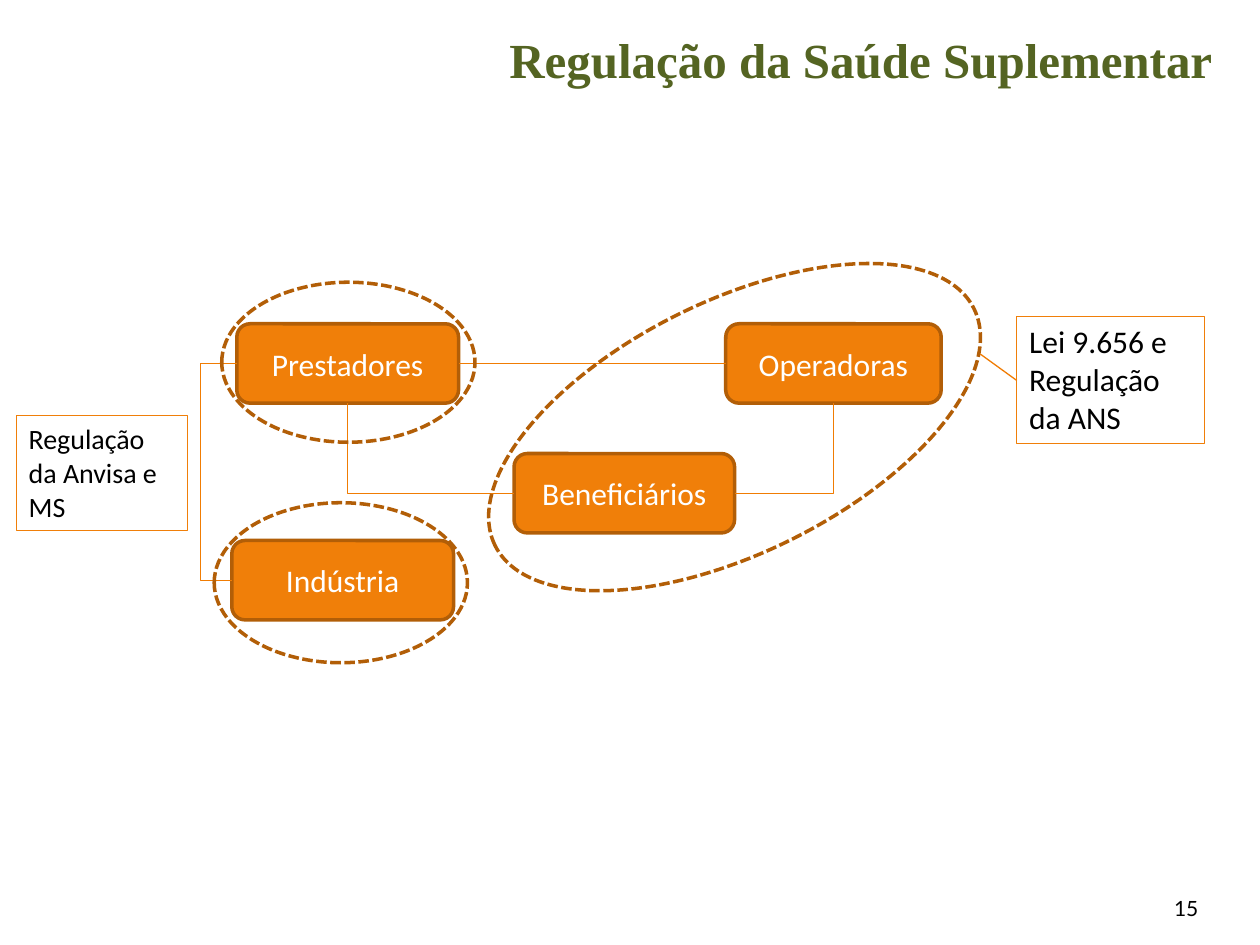
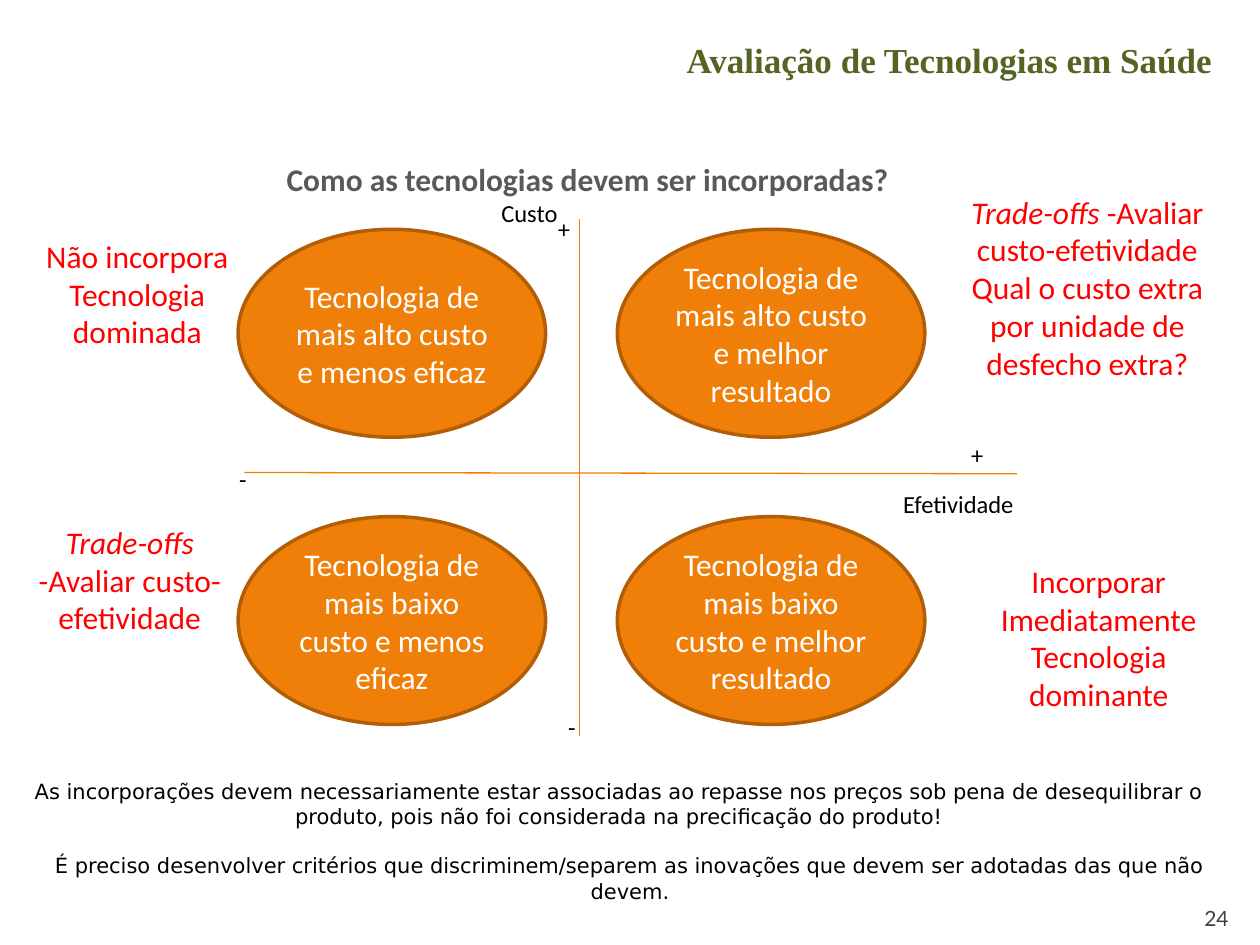
from dataclasses import dataclass
from itertools import product

from lxml.etree import SubElement
from pptx import Presentation
from pptx.dml.color import RGBColor
from pptx.enum.dml import MSO_LINE_DASH_STYLE as Dash
from pptx.enum.shapes import MSO_CONNECTOR as Link, MSO_SHAPE as Form
from pptx.enum.text import MSO_ANCHOR as Anchor, MSO_AUTO_SIZE as AutoSize, PP_ALIGN as Align
from pptx.oxml.ns import qn
from pptx.shapes.autoshape import Shape
from pptx.shapes.connector import Connector
from pptx.slide import Slide
from pptx.util import Inches, Pt

COLORS = {
    "title": "546422",
    "orange": "F07F09",
    "outline": "B25E07",
    "link": "F07C03",
    "heading": "595959",
    "alert": "FF0000",
    "black": "000000",
    "page": "404040",
    "white": "FFFFFF",
}

FONTS = {
    "title": {"name": "Times New Roman", "size": Pt(28), "bold": True},
    "subtitle": {"name": "Times New Roman", "size": Pt(20), "bold": True},
    "heading": {"name": "Calibri", "size": Pt(18), "bold": True},
    "body": {"name": "Calibri", "size": Pt(18)},
    "small": {"name": "Calibri", "size": Pt(16)},
    "axis": {"name": "Calibri", "size": Pt(14)},
    "remark": {"name": "DejaVu Sans", "size": Pt(12)},
    "page": {"name": "Lato", "size": Pt(12)},
}

FOREIGN_TERM = "Trade-offs"
TITLE_LAYOUT = 5


@dataclass(frozen=True)
class Box:
    left: float
    top: float
    width: float
    height: float

    def lengths(self) -> list[int]:
        return [Inches(v) for v in (self.left, self.top, self.width, self.height)]


@dataclass(frozen=True)
class Label:
    text: str
    box: Box
    font: str = "body"
    color: str = "black"
    align: Align = Align.LEFT
    anchor: Anchor = Anchor.TOP


@dataclass(frozen=True)
class Ring:
    box: Box
    rotation: float = 0


def rgb(color: str) -> RGBColor:
    return RGBColor.from_string(COLORS[color])


def write(shape: Shape, label: Label) -> None:
    frame = shape.text_frame
    frame_format = {"word_wrap": True, "auto_size": AutoSize.NONE, "vertical_anchor": label.anchor}
    for attribute, value in frame_format.items():
        setattr(frame, attribute, value)
    for index, line in enumerate(label.text.split("\n")):
        paragraph = frame.paragraphs[0] if index == 0 else frame.add_paragraph()
        paragraph.alignment = label.align
        for piece in filter(None, line.partition(FOREIGN_TERM)):
            run = paragraph.add_run()
            run.text = piece
            for attribute, value in FONTS[label.font].items():
                setattr(run.font, attribute, value)
            run.font.color.rgb = rgb(label.color)
            if piece == FOREIGN_TERM:
                run.font.italic = True


def add_label(slide: Slide, label: Label) -> None:
    write(slide.shapes.add_textbox(*label.box.lengths()), label)


def add_form(slide: Slide, form: Form, box: Box, outline: str, width: float, fill: str = "") -> Shape:
    shape = slide.shapes.add_shape(form, *box.lengths())
    shape.shadow.inherit = False
    shape.line.color.rgb = rgb(outline)
    shape.line.width = Pt(width)
    if fill:
        shape.fill.solid()
        shape.fill.fore_color.rgb = rgb(fill)
    else:
        shape.fill.background()
    return shape


def add_solid(slide: Slide, form: Form, text: str, box: Box) -> Shape:
    shape = add_form(slide, form, box, "outline", 2, "orange")
    write(shape, Label(text, box, color="white", align=Align.CENTER, anchor=Anchor.MIDDLE))
    return shape


def add_framed(slide: Slide, label: Label) -> None:
    write(add_form(slide, Form.RECTANGLE, label.box, "orange", 0.75), label)


def add_ring(slide: Slide, ring: Ring) -> None:
    shape = add_form(slide, Form.OVAL, ring.box, "outline", 2)
    shape.line.dash_style = Dash.SQUARE_DOT
    shape.rotation = ring.rotation


def add_line(slide: Slide, kind: Link, x1: float = 0, y1: float = 0, x2: float = 0, y2: float = 0) -> Connector:
    line = slide.shapes.add_connector(kind, *(Inches(v) for v in (x1, y1, x2, y2)))
    line.line.color.rgb = rgb("link")
    line.line.width = Pt(0.75)
    SubElement(line._element.spPr, qn("a:effectLst"))
    return line


def join(slide: Slide, kind: Link, start: Shape, start_site: int, end: Shape, end_site: int) -> Connector:
    line = add_line(slide, kind)
    line.begin_connect(start, start_site)
    line.end_connect(end, end_site)
    return line


def make_corner(line: Connector) -> None:
    line._element.spPr.find(qn("a:prstGeom")).set("prst", "bentConnector2")


def set_bend(line: Connector, offset: float) -> None:
    geometry = line._element.spPr.find(qn("a:prstGeom"))
    adjustments = geometry.find(qn("a:avLst"))
    if adjustments is None:
        adjustments = SubElement(geometry, qn("a:avLst"))
    ratio = round(Inches(offset) / line.width * 100000)
    SubElement(adjustments, qn("a:gd"), name="adj1", fmla=f"val {ratio}")


def start_slide(deck: Presentation, title: str, font: str) -> Slide:
    slide = deck.slides.add_slide(deck.slide_layouts[TITLE_LAYOUT])
    heading = slide.shapes.title
    box = Box(1.07, 0.12, 8.65, 0.7)
    for attribute, value in zip(("left", "top", "width", "height"), box.lengths()):
        setattr(heading, attribute, value)
    write(heading, Label(title, box, font, "title", Align.RIGHT, Anchor.MIDDLE))
    return slide


def add_page_number(slide: Slide, number: str, box: Box, color: str) -> None:
    add_label(slide, Label(number, box, "page", color, Align.RIGHT, Anchor.MIDDLE))


def build_regulation(deck: Presentation) -> None:
    slide = start_slide(deck, "Regulação da Saúde Suplementar", "title")
    add_page_number(slide, "15", Box(7.28, 7.06, 2.33, 0.29), "black")

    agents = {
        "Beneficiários": Box(4.08, 3.6, 1.75, 0.63),
        "Operadoras": Box(5.76, 2.57, 1.71, 0.63),
        "Prestadores": Box(1.88, 2.57, 1.76, 0.63),
        "Indústria": Box(1.84, 4.29, 1.76, 0.63),
    }
    beneficiaries, operators, providers, industry = (
        add_solid(slide, Form.ROUNDED_RECTANGLE, name, box) for name, box in agents.items()
    )
    left, bottom, right = 1, 2, 3
    make_corner(join(slide, Link.ELBOW, beneficiaries, right, operators, bottom))
    make_corner(join(slide, Link.ELBOW, beneficiaries, left, providers, bottom))
    join(slide, Link.STRAIGHT, operators, left, providers, right)
    set_bend(join(slide, Link.ELBOW, industry, left, providers, left), -0.25)

    for ring in (
        Ring(Box(3.71, 2.39, 4.24, 2), 333.7),
        Ring(Box(1.76, 2.24, 2.01, 1.27)),
        Ring(Box(1.7, 3.99, 2.01, 1.27)),
    ):
        add_ring(slide, ring)
    add_line(slide, Link.STRAIGHT, 7.78, 2.81, 8.07, 3.02)
    add_framed(slide, Label("Lei 9.656 e Regulação da ANS", Box(8.07, 2.51, 1.49, 1.01)))
    add_framed(slide, Label("Regulação da Anvisa e MS", Box(0.13, 3.3, 1.36, 0.91), "small"))


def build_assessment(deck: Presentation) -> None:
    slide = start_slide(deck, "Avaliação de Tecnologias em Saúde", "subtitle")
    question = "Como as tecnologias devem ser incorporadas?"
    add_label(slide, Label(question, Box(0.91, 1.22, 7.51, 0.4), "heading", "heading", Align.CENTER))

    costs = {"mais alto custo": 1.82, "mais baixo custo": 4.1}
    outcomes = {"menos eficaz": 1.89, "melhor resultado": 4.9}
    for (cost, top), (outcome, left) in product(costs.items(), outcomes.items()):
        add_solid(slide, Form.OVAL, f"Tecnologia de {cost} e {outcome}", Box(left, top, 2.44, 1.65))

    add_line(slide, Link.STRAIGHT, 4.6, 1.74, 4.6, 5.84)
    add_line(slide, Link.STRAIGHT, 8.07, 3.76, 1.94, 3.75)
    for text, left, top, width in (
        ("Efetividade", 7.07, 3.83, 1.36),
        ("Custo", 3.88, 1.52, 0.71),
        ("+", 7.61, 3.44, 0.35),
        ("+", 4.33, 1.65, 0.35),
        ("-", 1.8, 3.63, 0.35),
        ("-", 4.41, 5.6, 0.35),
    ):
        add_label(slide, Label(text, Box(left, top, width, 0.34), "axis"))

    trade_off = f"{FOREIGN_TERM} -Avaliar custo-efetividade"
    decisions = {
        "Incorporar Imediatamente\nTecnologia dominante": Box(7.77, 4.41, 1.9, 1.31),
        f"{trade_off}\nQual o custo extra por unidade de desfecho extra?": Box(7.49, 1.48, 2.28, 1.62),
        trade_off: Box(0.08, 4.1, 1.9, 1.01),
        "Não incorpora\nTecnologia dominada": Box(0.14, 1.83, 1.9, 1.01),
    }
    for text, box in decisions.items():
        add_label(slide, Label(text, box, color="alert", align=Align.CENTER))

    remarks = {
        "É preciso desenvolver critérios que discriminem/separem as inovações "
        "que devem ser adotadas das que não devem.": Box(0.12, 6.72, 9.76, 0.71),
        "As incorporações devem necessariamente estar associadas ao repasse nos preços "
        "sob pena de desequilibrar o produto, pois não foi considerada "
        "na precificação do produto!": Box(0.16, 6.13, 9.51, 0.5),
    }
    for text, box in remarks.items():
        add_label(slide, Label(text, box, "remark", align=Align.CENTER))
    add_page_number(slide, "24", Box(7.52, 7.13, 2.33, 0.31), "page")


def main() -> None:
    deck = Presentation()
    deck.slide_width = Inches(10)
    deck.slide_height = Inches(7.5)
    build_regulation(deck)
    build_assessment(deck)
    deck.save("out.pptx")


if __name__ == "__main__":
    main()
